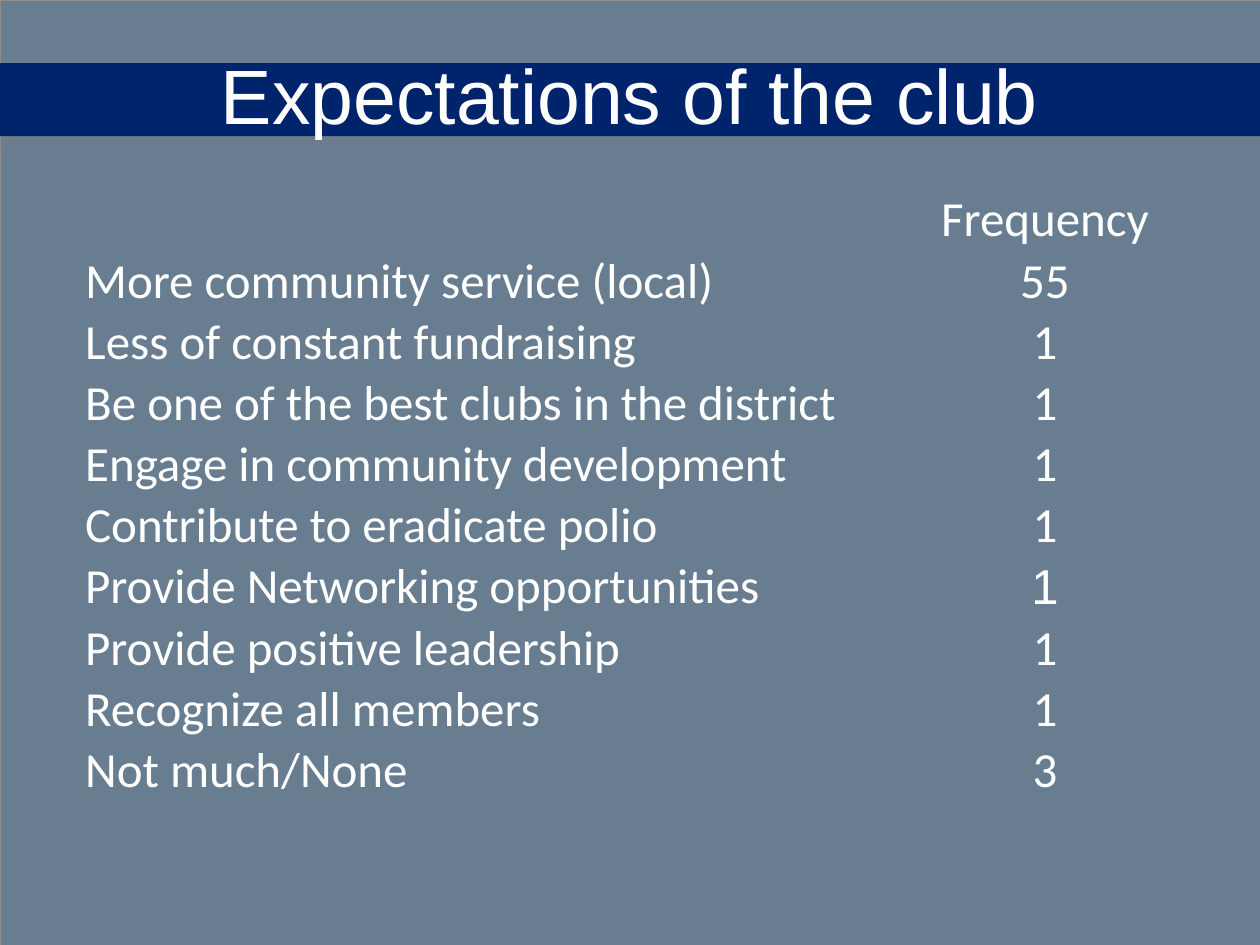
from dataclasses import dataclass

from lxml import etree
from pptx import Presentation
from pptx import util as u
from pptx.dml.color import RGBColor
from pptx.enum import shapes, text
from pptx.oxml.ns import qn


@dataclass(frozen=True)
class Theme:
    ground: str = "687D90"
    band: str = "00246C"
    edge: str = "958D85"
    shadow: str = "808080"
    ink: str = "FFFFFF"
    head_font: str = "Arial"
    body_font: str = "Calibri"
    head_size: int = 44
    body_size: int = 28


THEME = Theme()
WIDTH, HEIGHT = 10, 7.5
NO_GRID_STYLE = "{2D5ABB26-0587-4C30-8999-92F81FD0307C}"
ROWS = [
    ("", "Frequency"),
    ("More community service (local)", "55"),
    ("Less of constant fundraising", "1"),
    ("Be one of the best clubs in the district", "1"),
    ("Engage in community development", "1"),
    ("Contribute to eradicate polio", "1"),
    ("Provide Networking opportunities", "1"),
    ("Provide positive leadership", "1"),
    ("Recognize all members", "1"),
    ("Not much/None", "3"),
]
ARIAL_CELLS = {(6, 1)}


def inches(box):
    return [u.Inches(v) for v in box]


def add_run(p, words, font, size):
    r = p.add_run()
    r.text = words
    r.font.name, r.font.size = font, u.Pt(size)
    r.font.color.rgb = RGBColor.from_string(THEME.ink)


def add_rect(slide, box):
    sp = slide.shapes.add_shape(shapes.MSO_SHAPE.RECTANGLE, *inches(box))
    sp.shadow.inherit = False
    return sp


def add_backdrop(slide, box):
    x, y, w, h = box
    fill = slide.background.fill
    fill.solid()
    fill.fore_color.rgb = RGBColor.from_string(THEME.ground)

    # Thin frame round the slide
    frame = add_rect(slide, box)
    frame.fill.background()
    frame.line.color.rgb = RGBColor.from_string(THEME.edge)
    frame.line.width = u.Pt(0.13)

    # Title band with a soft shadow below
    band = add_rect(slide, (x - 0.08, y + h / 15, w + 0.17, 0.58))
    band.fill.solid()
    band.fill.fore_color.rgb = RGBColor.from_string(THEME.band)
    band.line.fill.background()
    effects = band._element.spPr.find(qn("a:effectLst"))
    shadow = etree.SubElement(effects, qn("a:outerShdw"), blurRad=str(u.Pt(7)),
                              dist=str(u.Pt(4.8)), dir="5400000", rotWithShape="0")
    color = etree.SubElement(shadow, qn("a:srgbClr"), val=THEME.shadow)
    etree.SubElement(color, qn("a:alpha"), val="25000")


def add_title(slide, box, words):
    title = slide.shapes.title
    title.left, title.top, title.width, title.height = inches(box)
    slide.shapes._spTree.append(title._element)  # in front of the band
    tf = title.text_frame
    tf.auto_size = text.MSO_AUTO_SIZE.SHAPE_TO_FIT_TEXT
    tf.vertical_anchor = text.MSO_ANCHOR.TOP
    p = tf.paragraphs[0]
    p.alignment = text.PP_ALIGN.CENTER
    add_run(p, words, THEME.head_font, THEME.head_size)


def add_frequency_table(slide, box, rows, shares):
    frame = slide.shapes.add_table(len(rows), len(shares), *inches(box))
    table = frame.table
    table.first_row = table.horz_banding = False
    table._tbl.tblPr.find(qn("a:tableStyleId")).text = NO_GRID_STYLE
    for column, share in zip(table.columns, shares):
        column.width = u.Inches(box[2] * share)

    for i, row in enumerate(rows):
        for j, words in enumerate(row):
            cell = table.cell(i, j)
            cell.fill.background()
            cell.vertical_anchor = text.MSO_ANCHOR.MIDDLE
            cell.margin_left = cell.margin_right = cell.margin_top = u.Inches(0.01)
            cell.margin_bottom = 0
            if words:
                p = cell.text_frame.paragraphs[0]
                p.alignment = text.PP_ALIGN.CENTER if j else text.PP_ALIGN.LEFT
                font = THEME.head_font if (i, j) in ARIAL_CELLS else THEME.body_font
                add_run(p, words, font, THEME.body_size)


def main():
    prs = Presentation()
    prs.slide_width, prs.slide_height = inches((WIDTH, HEIGHT))
    slide = prs.slides.add_slide(prs.slide_layouts[5])
    add_backdrop(slide, (0, 0, WIDTH, HEIGHT))
    add_frequency_table(slide, (WIDTH / 15, HEIGHT / 5, WIDTH * 13 / 15, 4.74),
                        ROWS, (0.76, 0.24))
    add_title(slide, (0, 0.33, WIDTH, 0.84), "Expectations of the club")
    prs.save("out.pptx")


if __name__ == "__main__":
    main()
